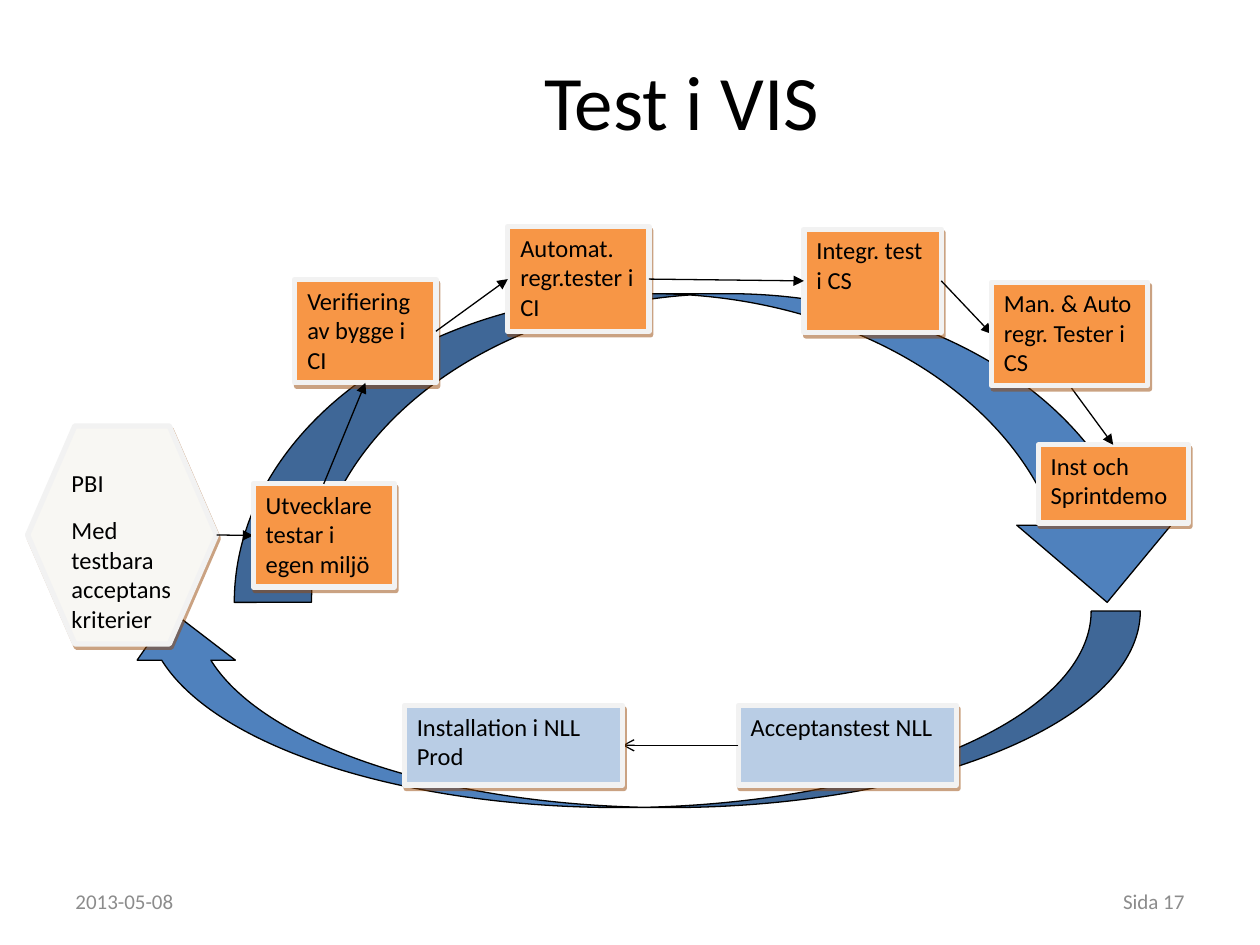
"""Build the slide that shows the test cycle in VIS."""
from dataclasses import dataclass
from typing import NamedTuple

from lxml.etree import SubElement
from pptx import Presentation
from pptx.dml.color import RGBColor
from pptx.enum.shapes import MSO_CONNECTOR, MSO_SHAPE
from pptx.enum.text import MSO_ANCHOR, PP_ALIGN
from pptx.oxml.ns import qn
from pptx.util import Pt

STRAIGHT = MSO_CONNECTOR.STRAIGHT
PROCESS = MSO_SHAPE.FLOWCHART_PROCESS
HEXAGON = MSO_SHAPE.HEXAGON
UP_ARROW = MSO_SHAPE.CURVED_UP_ARROW
DOWN_ARROW = MSO_SHAPE.CURVED_DOWN_ARROW
TOP, MIDDLE = MSO_ANCHOR.TOP, MSO_ANCHOR.MIDDLE
LEFT, CENTER, RIGHT = PP_ALIGN.LEFT, PP_ALIGN.CENTER, PP_ALIGN.RIGHT


@dataclass(frozen=True)
class Theme:
    """Hold the colours, font and sizes of the slide."""
    font: str = "Calibri"
    ink: str = "000000"
    grey: str = "8C8C8C"
    blue: str = "4F81BD"
    pale: str = "B9CDE5"
    orange: str = "F79646"
    cream: str = "F8F7F3"
    edge: str = "F2F2F2"
    shade: str = "974706"
    title: float = 44
    label: float = 14
    small: float = 12
    thin: float = 0.75
    thick: float = 3


THEME = Theme()


class Area(NamedTuple):
    """Give a place on the slide in points."""
    left: float
    top: float
    width: float
    height: float

    def point(self, side: str) -> tuple[float, float]:
        """Return the middle of one side."""
        across, down = {"top": (0.5, 0), "left": (0, 0.5),
                        "bottom": (0.5, 1), "right": (1, 0.5)}[side]
        return self.left + across * self.width, self.top + down * self.height

    def lengths(self) -> list[Pt]:
        """Return the four values as lengths."""
        return [Pt(value) for value in self]


@dataclass(frozen=True)
class Box:
    """Describe a step of the cycle."""
    area: Area
    lines: tuple[str, ...]
    fill: str = THEME.orange
    kind: int = PROCESS


@dataclass(frozen=True)
class Link:
    """Describe an arrow between two steps."""
    start: Box
    exit: str
    end: Box
    entry: str
    head: str = "triangle"


GOAL = Box(Area(15.8, 243.4, 108, 124.6),
           ("PBI", "Med testbara acceptans kriterier"), THEME.cream, HEXAGON)
CODE = Box(Area(144.7, 276.5, 80.6, 59), ("Utvecklare testar i egen miljö",))
BUILD = Box(Area(168.5, 159.8, 80.6, 59), ("Verifiering av bygge i CI",))
AUTO = Box(Area(290.2, 129.6, 80.6, 59.8), ("Automat. regr.tester i CI",))
JOIN = Box(Area(459.4, 131, 78.5, 59), ("Integr. test \ni CS",))
MANUAL = Box(Area(566.6, 161.3, 89.3, 59), ("Man. & Auto regr. Tester i CS",))
DEMO = Box(Area(593.3, 254.2, 85.7, 44.6), ("Inst och Sprintdemo",))
ACCEPT = Box(Area(421.9, 403.2, 124.6, 45.4), ("Acceptanstest NLL",), THEME.pale)
PROD = Box(Area(231.1, 403.2, 124.6, 45.4), ("Installation i NLL Prod",), THEME.pale)

SCENE = (
    GOAL, Link(GOAL, "right", CODE, "left"),
    JOIN, DEMO, ACCEPT, Link(JOIN, "right", MANUAL, "left"),
    CODE, Link(ACCEPT, "left", PROD, "right", "arrow"),
    Link(MANUAL, "bottom", DEMO, "top"),
    AUTO, Link(AUTO, "right", JOIN, "left"),
    PROD, MANUAL, BUILD,
    Link(CODE, "top", BUILD, "bottom"), Link(BUILD, "right", AUTO, "left"),
)


def color(code: str) -> RGBColor:
    """Turn a hex code into a colour."""
    return RGBColor.from_string(code)


def write(frame, *lines: str, size: float = THEME.label, ink: str = THEME.ink,
          align: int = LEFT, anchor: int = TOP, after: float = 0) -> None:
    """Fill a text frame with formatted paragraphs."""
    frame.word_wrap = True
    frame.vertical_anchor = anchor
    for index, line in enumerate(lines):
        para = frame.add_paragraph() if index else frame.paragraphs[0]
        para.text = line
        para.alignment = align
        para.space_after = Pt(after)
        for run in para.runs:
            run.font.name = THEME.font
            run.font.size = Pt(size)
            run.font.color.rgb = color(ink)


def draw_shape(slide, kind: int, area: Area, fill: str, line: str, weight: float):
    """Draw a filled shape with no shadow."""
    shape = slide.shapes.add_shape(kind, *area.lengths())
    shape.shadow.inherit = False
    shape.fill.solid()
    shape.fill.fore_color.rgb = color(fill)
    shape.line.color.rgb = color(line)
    shape.line.width = Pt(weight)
    return shape


def draw_box(slide, box: Box) -> None:
    """Draw a step with its text and hard shadow."""
    shape = draw_shape(slide, box.kind, box.area, box.fill, THEME.edge, THEME.thick)
    effects = shape._element.spPr.find(qn("a:effectLst"))
    shadow = SubElement(effects, qn("a:outerShdw"), blurRad="0",
                        dist=str(Pt(2.2)), dir=str(63 * 60000),
                        algn="ctr", rotWithShape="0")
    tint = SubElement(shadow, qn("a:srgbClr"), val=THEME.shade)
    SubElement(tint, qn("a:alpha"), val="50000")
    write(shape.text_frame, *box.lines, after=10)


def draw_link(slide, link: Link) -> None:
    """Draw an arrow from side to side."""
    ends = link.start.area.point(link.exit) + link.end.area.point(link.entry)
    arrow = slide.shapes.add_connector(STRAIGHT, *map(Pt, ends))
    arrow.line.color.rgb = color(THEME.ink)
    arrow.line.width = Pt(THEME.thin)
    props = arrow._element.spPr
    SubElement(props.find(qn("a:ln")), qn("a:tailEnd"), type=link.head)
    SubElement(props, qn("a:effectLst"))


def draw_note(slide, area: Area, text: str, align: int) -> None:
    """Draw a grey footer text."""
    box = slide.shapes.add_textbox(*area.lengths())
    write(box.text_frame, text, size=THEME.small, ink=THEME.grey,
          align=align, anchor=MIDDLE)


def main() -> None:
    """Build and save the slide."""
    deck = Presentation()
    deck.slide_width, deck.slide_height = Pt(720), Pt(540)
    slide = deck.slides.add_slide(deck.slide_layouts[5])

    title = slide.shapes.title
    title.left, title.top, title.width, title.height = Area(151, 21, 477, 72).lengths()
    write(title.text_frame, "Test i VIS", size=THEME.title, align=CENTER, anchor=MIDDLE)

    lower = draw_shape(slide, UP_ARROW, Area(69.8, 349.2, 581.8, 112.3),
                       THEME.blue, THEME.ink, THEME.thin)
    lower._element.spPr.get_or_add_xfrm().set("flipH", "1")
    draw_shape(slide, DOWN_ARROW, Area(133.9, 167.8, 542.9, 176.4),
               THEME.blue, THEME.ink, THEME.thin)

    for item in SCENE:
        if isinstance(item, Box):
            draw_box(slide, item)
        else:
            draw_link(slide, item)

    draw_note(slide, Area(36, 500.5, 168, 28.8), "2013-05-08", LEFT)
    draw_note(slide, Area(516, 500.5, 168, 28.8), "Sida 17", RIGHT)
    deck.save("out.pptx")


if __name__ == "__main__":
    main()
